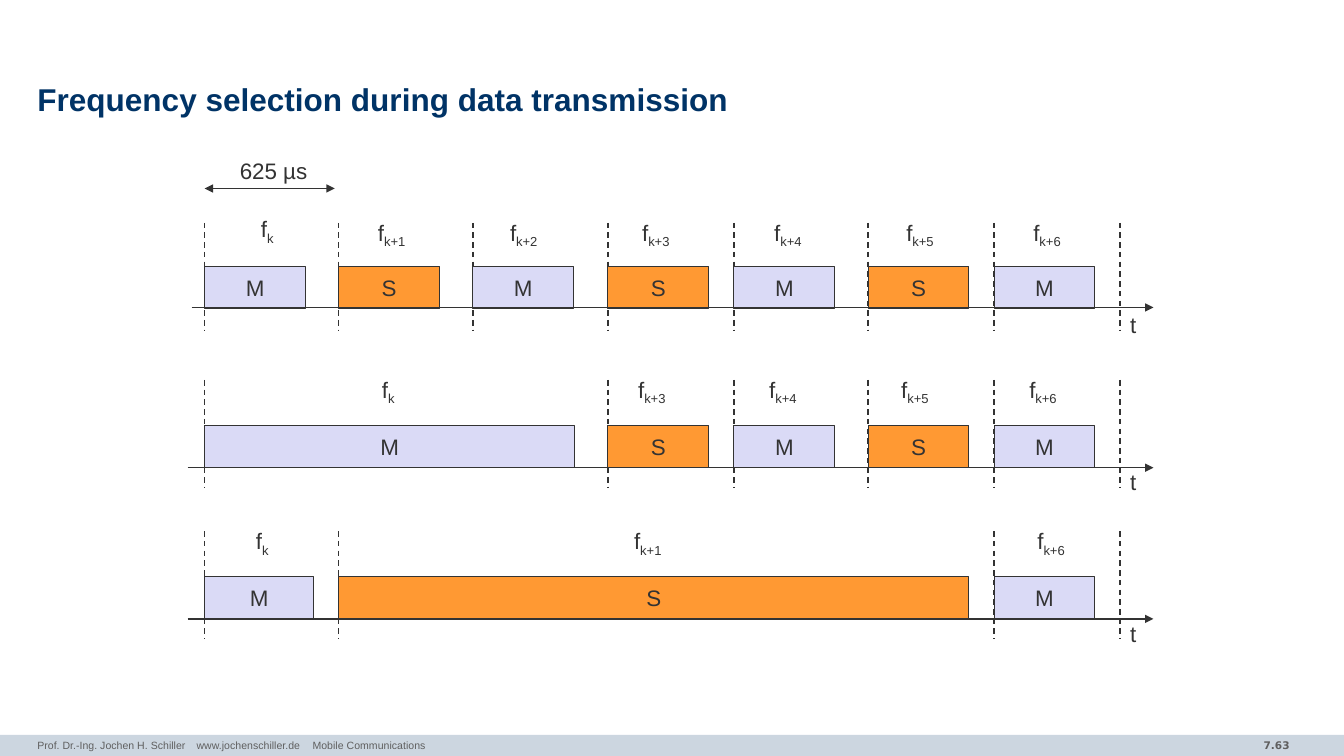
from dataclasses import dataclass

from lxml import etree
from pptx import Presentation
from pptx import util as u
from pptx.dml.color import RGBColor
from pptx.enum import dml, shapes, text
from pptx.oxml import ns

NAVY = RGBColor(0x00, 0x33, 0x66)
INK = RGBColor(0x33, 0x33, 0x33)
GREY = RGBColor(0x5F, 0x5F, 0x5F)
FOOTER_BLUE = RGBColor(0xCC, 0xD6, 0xE0)
LILAC = RGBColor(0xDA, 0xDA, 0xF6)
ORANGE = RGBColor(0xFF, 0x99, 0x33)
SENDER_COLOURS = {"M": LILAC, "S": ORANGE}

BAR_HEIGHT = 0.42
DASH_HEIGHT = 1.07
LAST_DASH = 11.11
AXIS_END = 11.44


@dataclass
class Packet:
    sender: str
    left: float
    width: float
    index: str
    label_left: float
    label_rise: float = 0.09


@dataclass
class Timeline:
    top: float
    bar_top: float
    axis_left: float
    axis_y: float
    time_top: float
    packets: list[Packet]


TIMELINES = [
    Timeline(2.21, 2.64, 1.9, 3.05, 3.04, [
        Packet("M", 2.03, 1, "k", 2.49, 0.12),
        Packet("S", 3.36, 1, "k+1", 3.65),
        Packet("M", 4.69, 1, "k+2", 4.96),
        Packet("S", 6.03, 1, "k+3", 6.27),
        Packet("M", 7.28, 1, "k+4", 7.58),
        Packet("S", 8.61, 1, "k+5", 8.89),
        Packet("M", 9.86, 1, "k+6", 10.15),
    ]),
    Timeline(3.77, 4.22, 1.86, 4.64, 4.6, [
        Packet("M", 2.03, 3.67, "k", 3.69),
        Packet("S", 6.03, 1, "k+3", 6.23),
        Packet("M", 7.28, 1, "k+4", 7.53),
        Packet("S", 8.61, 1, "k+5", 8.84),
        Packet("M", 9.86, 1, "k+6", 10.11),
    ]),
    Timeline(5.27, 5.72, 1.86, 6.14, 6.1, [
        Packet("M", 2.03, 1.08, "k", 2.44),
        Packet("S", 3.36, 6.25, "k+1", 6.19),
        Packet("M", 9.86, 1, "k+6", 10.19),
    ]),
]


def write(box, words: str, *, subscript: str = "", size: float = 16, colour=INK,
          font: str = "Arial", bold: bool = False, align=text.PP_ALIGN.LEFT,
          anchor=text.MSO_ANCHOR.TOP, wrap: bool = False, grow: bool = False,
          insets=(0.1, 0.05, 0.1, 0.05), spacing: float = 1, tabs=()) -> None:
    frame = box.text_frame
    frame.word_wrap = wrap
    frame.auto_size = text.MSO_AUTO_SIZE.SHAPE_TO_FIT_TEXT if grow else text.MSO_AUTO_SIZE.NONE
    frame.vertical_anchor = anchor
    frame.margin_left, frame.margin_top, frame.margin_right, frame.margin_bottom = map(u.Inches, insets)
    para = frame.paragraphs[0]
    para.alignment = align
    para.line_spacing = spacing
    para.space_before = u.Pt(0)
    if tabs:
        stops = etree.SubElement(para._p.get_or_add_pPr(), ns.qn("a:tabLst"))
        for position in tabs:
            etree.SubElement(stops, ns.qn("a:tab"), pos=str(u.Inches(position)), algn="l")
    for part, baseline in ((words, None), (subscript, "-25000")):
        if not part:
            continue
        span = para.add_run()
        span.text = part
        span.font.name = font
        span.font.size = u.Pt(size)
        span.font.bold = bold
        span.font.color.rgb = colour
        if baseline:
            span._r.get_or_add_rPr().set("baseline", baseline)


def add_text(page, left: float, top: float, width: float, height: float, words: str, **style) -> None:
    box = page.shapes.add_textbox(*map(u.Inches, (left, top, width, height)))
    write(box, words, **style)


def add_box(page, left: float, top: float, width: float, height: float, fill: RGBColor, outlined: bool):
    box = page.shapes.add_shape(shapes.MSO_SHAPE.RECTANGLE, *map(u.Inches, (left, top, width, height)))
    box.shadow.inherit = False
    box.fill.solid()
    box.fill.fore_color.rgb = fill
    if outlined:
        box.line.color.rgb = INK
        box.line.width = u.Pt(0.75)
    else:
        box.line.fill.background()
    return box


def add_line(page, start: tuple[float, float], end: tuple[float, float], *,
             dashed: bool = False, arrows: tuple[str, ...] = ()) -> None:
    line = page.shapes.add_connector(shapes.MSO_CONNECTOR.STRAIGHT, *map(u.Inches, start + end))
    line.line.color.rgb = INK
    line.line.width = u.Pt(1)
    if dashed:
        line.line.dash_style = dml.MSO_LINE.DASH
    for arrow in arrows:
        etree.SubElement(line.line._get_or_add_ln(), ns.qn(arrow), type="triangle")
    etree.SubElement(line._element.spPr, ns.qn("a:effectLst"))


def draw_timeline(page, row: Timeline) -> None:
    for x in [packet.left for packet in row.packets] + [LAST_DASH]:
        add_line(page, (x, row.top), (x, row.top + DASH_HEIGHT), dashed=True)
    for packet in row.packets:
        bar = add_box(page, packet.left, row.bar_top, packet.width, BAR_HEIGHT,
                      SENDER_COLOURS[packet.sender], True)
        write(bar, packet.sender, align=text.PP_ALIGN.CENTER, anchor=text.MSO_ANCHOR.MIDDLE)
        label_width = 0.34 if packet.index == "k" else 0.51
        add_text(page, packet.label_left, row.top - packet.label_rise, label_width, 0.36,
                 "f", subscript=packet.index, grow=True)
    add_line(page, (row.axis_left, row.axis_y), (AXIS_END, row.axis_y), arrows=("a:tailEnd",))
    add_text(page, LAST_DASH, row.time_top, 0.26, 0.37, "t", grow=True)


def main() -> None:
    deck = Presentation()
    deck.slide_width, deck.slide_height = u.Inches(13.33), u.Inches(7.5)
    page = deck.slides.add_slide(deck.slide_layouts[5])

    title = page.shapes.title
    title.left, title.top, title.width, title.height = map(u.Inches, (0.37, 0.78, 12.6, 0.47))
    write(title, "Frequency selection during data transmission", size=22.5, colour=NAVY, bold=True,
          anchor=text.MSO_ANCHOR.MIDDLE, wrap=True, insets=(0, 0, 0, 0), spacing=0.85)

    add_box(page, 0, 7.29, 13.33, 0.21, FOOTER_BLUE, False)
    add_text(page, 0.37, 7.28, 8.72, 0.22,
             "Prof. Dr.-Ing. Jochen H. Schiller\twww.jochenschiller.de\tMobile Communications",
             size=7.5, colour=GREY, wrap=True, insets=(0, 0.05, 0, 0.05), tabs=(1.58, 2.73))
    add_text(page, 11.1, 7.28, 1.79, 0.23, "7.63", size=7.5, colour=GREY, font="DejaVu Sans",
             bold=True, align=text.PP_ALIGN.RIGHT, wrap=True)

    add_text(page, 2.28, 1.51, 0.87, 0.37, "625 µs", grow=True)
    add_line(page, (2.03, 1.87), (3.32, 1.87), arrows=("a:headEnd", "a:tailEnd"))
    for row in TIMELINES:
        draw_timeline(page, row)

    deck.save("out.pptx")


if __name__ == "__main__":
    main()
